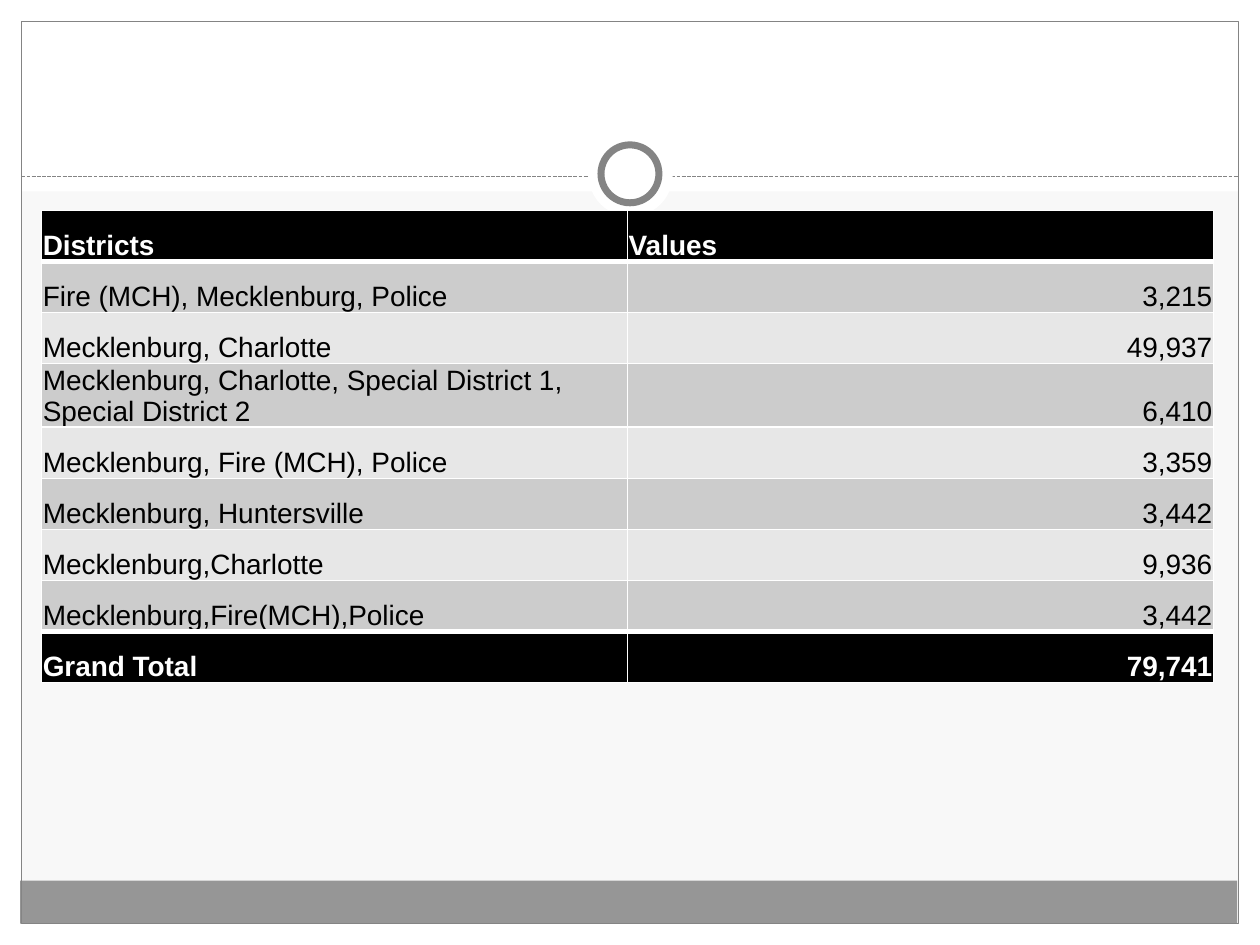
from lxml import etree
from pptx import Presentation
from pptx.dml.color import RGBColor
from pptx.enum.dml import MSO_LINE
from pptx.enum.shapes import MSO_CONNECTOR, MSO_SHAPE
from pptx.enum.text import MSO_ANCHOR, PP_ALIGN
from pptx.oxml.ns import qn
from pptx.util import Inches, Pt

RECT, OVAL = MSO_SHAPE.RECTANGLE, MSO_SHAPE.OVAL
STRAIGHT = MSO_CONNECTOR.STRAIGHT
DASH = MSO_LINE.SQUARE_DOT
BOTTOM = MSO_ANCHOR.BOTTOM
LEFT, RIGHT = PP_ALIGN.LEFT, PP_ALIGN.RIGHT

WHITE, BLACK, GRAY = "FFFFFF", "000000", "848484"
BANDS = ("CCCCCC", "E7E7E7")
ROWS = [
    ("Districts", "Values"),
    ("Fire (MCH), Mecklenburg, Police", "3,215"),
    ("Mecklenburg, Charlotte", "49,937"),
    ("Mecklenburg, Charlotte, Special District 1, Special District 2", "6,410"),
    ("Mecklenburg, Fire (MCH), Police", "3,359"),
    ("Mecklenburg, Huntersville", "3,442"),
    ("Mecklenburg,Charlotte", "9,936"),
    ("Mecklenburg,Fire(MCH),Police", "3,442"),
    ("Grand Total", "79,741"),
]


def rgb(color):
    return RGBColor.from_string(color)


def write(tf, text, size=16, color=BLACK, bold=False, align=LEFT, font="Arial"):
    p = tf.paragraphs[0]
    p.alignment = align
    r = p.add_run()
    r.text = text
    r.font.name, r.font.size, r.font.bold = font, Pt(size), bold
    r.font.color.rgb = rgb(color)


def set_border(cell, side, width, color=WHITE):
    tc_pr = cell._tc.get_or_add_tcPr()
    ln = etree.SubElement(tc_pr, qn(f"a:ln{side}"), w=str(Pt(width)))
    fill = etree.SubElement(ln, qn("a:solidFill"))
    etree.SubElement(fill, qn("a:srgbClr"), val=color)


class Deck:
    def __init__(self, width, height, background):
        self.prs = Presentation()
        self.prs.slide_width, self.prs.slide_height = Inches(width), Inches(height)
        self.s = self.prs.slides.add_slide(self.prs.slide_layouts[6])
        fill = self.s.background.fill
        fill.solid()
        fill.fore_color.rgb = rgb(background)

    def shape(self, kind, x, y, w, h, fill=None, line=None, width=0.75):
        sp = self.s.shapes.add_shape(kind, Inches(x), Inches(y), Inches(w), Inches(h))
        sp.shadow.inherit = False
        if fill:
            sp.fill.solid()
            sp.fill.fore_color.rgb = rgb(fill)
        else:
            sp.fill.background()
        if line:
            sp.line.color.rgb = rgb(line)
            sp.line.width = Pt(width)
        else:
            sp.line.fill.background()

    def dashed_line(self, x1, y1, x2, y2, color=GRAY, width=0.75):
        cn = self.s.shapes.add_connector(
            STRAIGHT, Inches(x1), Inches(y1), Inches(x2), Inches(y2))
        cn.line.color.rgb = rgb(color)
        cn.line.width = Pt(width)
        cn.line.dash_style = DASH
        etree.SubElement(cn._element.spPr, qn("a:effectLst"))

    def table(self, rows, x, y, w, h):
        last = len(rows) - 1
        tbl = self.s.shapes.add_table(
            len(rows), len(rows[0]), Inches(x), Inches(y), Inches(w), Inches(h)).table
        tbl.last_row = True
        for i, row in enumerate(rows):
            strong = i in (0, last)
            for j, text in enumerate(row):
                cell = tbl.cell(i, j)
                cell.vertical_anchor = BOTTOM
                cell.margin_left = cell.margin_right = cell.margin_top = Inches(0.01)
                cell.margin_bottom = 0
                # Thick rules below the header and above the total
                set_border(cell, "L", 1)
                set_border(cell, "R", 1)
                set_border(cell, "T", 3 if i in (1, last) else 1)
                set_border(cell, "B", 3 if i in (0, last - 1) else 1)
                cell.fill.solid()
                cell.fill.fore_color.rgb = rgb(BLACK if strong else BANDS[(i - 1) % 2])
                write(cell.text_frame, text, color=WHITE if strong else BLACK,
                      bold=strong, align=RIGHT if i and j else LEFT)


def main():
    deck = Deck(10, 7.5, "F8F8F8")

    # White margins and header area
    for box in ((0, 7.33, 10, 0.17), (0, 0, 10, 1.52),
                (0, 0, 0.17, 7.5), (9.83, 0, 0.17, 7.5)):
        deck.shape(RECT, *box, fill=WHITE)

    # Footer band and frame
    deck.shape(RECT, 0.16, 6.99, 9.66, 0.34, fill="969696")
    deck.shape(RECT, 0.17, 0.17, 9.66, 7.16, line=GRAY)

    # Dashed divider with ring
    deck.dashed_line(0.17, 1.4, 9.83, 1.4)
    deck.shape(OVAL, 4.67, 1.05, 0.67, 0.67, fill=WHITE)
    deck.shape(OVAL, 4.77, 1.15, 0.46, 0.46, fill=WHITE, line=GRAY, width=4)

    # District totals
    deck.table(ROWS, 0.33, 1.67, 9.3, 3.65)

    deck.prs.save("out.pptx")


if __name__ == "__main__":
    main()
